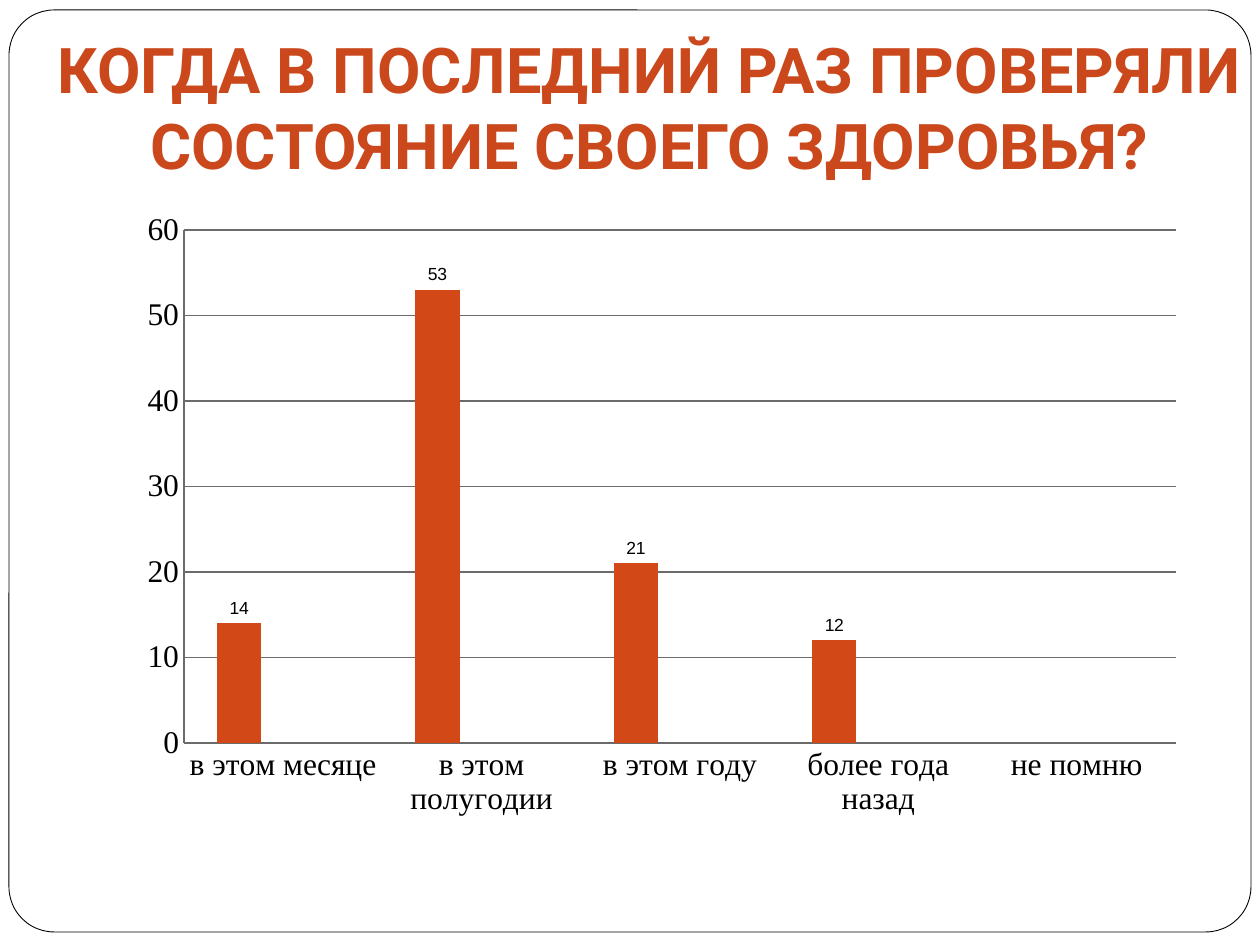
"""Build a slide with a survey question and a column chart of the answers."""
from dataclasses import dataclass

from lxml import etree
from pptx import Presentation
from pptx.chart.data import CategoryChartData
from pptx.dml.color import RGBColor
from pptx.enum.chart import XL_CHART_TYPE as Chart, XL_LABEL_POSITION as LabelPos
from pptx.enum.chart import XL_TICK_MARK as Tick
from pptx.enum.shapes import MSO_SHAPE as Shape
from pptx.enum.text import MSO_ANCHOR as Anchor, PP_ALIGN as Align
from pptx.oxml.ns import qn
from pptx.util import Emu, Pt

PX = 914400 / 126
COLORS = {
    "paper": "FFFFFF", "ink": "000000", "title": "CA481C", "grid": "6B6B6B",
    "orange": "D34817", "red": "9B2D1F", "sand": "A28E6A",
}
TITLE = "КОГДА В ПОСЛЕДНИЙ РАЗ ПРОВЕРЯЛИ СОСТОЯНИЕ СВОЕГО ЗДОРОВЬЯ?"
ANSWERS = ("в этом месяце", "в этом полугодии", "в этом году",
           "более года назад", "не помню")


@dataclass(frozen=True)
class Box:
    x: int
    y: int
    w: int
    h: int

    def emu(self) -> tuple:
        return tuple(px(v) for v in (self.x, self.y, self.w, self.h))


@dataclass(frozen=True)
class Series:
    name: str
    color: str
    values: tuple


SERIES = (
    Series("Series 1", "orange", (14, 53, 21, 12, None)),
    Series("Series 2", "red", (None,) * 5),
    Series("Series 3", "sand", (None,) * 5),
)


def px(n: int) -> Emu:
    return Emu(round(n * PX))


def rgb(name: str) -> RGBColor:
    return RGBColor.from_string(COLORS[name])


def style_font(font, name: str, size: int, color: str, bold: bool = False) -> None:
    font.name, font.size, font.bold = name, Pt(size), bold
    font.color.rgb = rgb(color)


def style_line(line, color: str, width: float) -> None:
    line.color.rgb = rgb(color)
    line.width = Pt(width)


def add_frame(s, box: Box) -> None:
    sp = s.shapes.add_shape(Shape.ROUNDED_RECTANGLE, *box.emu())
    sp.adjustments[0] = 0.049
    sp.shadow.inherit = False
    sp.fill.solid()
    sp.fill.fore_color.rgb = rgb("paper")
    style_line(sp.line, "ink", 0.5)


def add_title(s, box: Box, text: str) -> None:
    tf = s.shapes.add_textbox(*box.emu()).text_frame
    tf.word_wrap = True
    tf.vertical_anchor = Anchor.BOTTOM
    tf.margin_left = tf.margin_right = tf.margin_bottom = px(13)
    tf.margin_top = px(6)
    p = tf.paragraphs[0]
    p.alignment = Align.CENTER
    r = p.add_run()
    r.text = text
    style_font(r.font, "Roboto", 36, "title", bold=True)


def place_plot(chart, box: Box, plot: Box) -> None:
    area = chart._chartSpace.chart.plotArea
    for old in area.findall(qn("c:layout")):
        area.remove(old)
    layout = etree.Element(qn("c:layout"))
    manual = etree.SubElement(layout, qn("c:manualLayout"))
    settings = {
        "layoutTarget": "inner", "xMode": "edge", "yMode": "edge",
        "x": (plot.x - box.x) / box.w, "y": (plot.y - box.y) / box.h,
        "w": plot.w / box.w, "h": plot.h / box.h,
    }
    for tag, value in settings.items():
        etree.SubElement(manual, qn(f"c:{tag}")).set("val", str(value))
    area.insert(0, layout)


def add_answers(s, box: Box, plot: Box) -> None:
    data = CategoryChartData()
    data.categories = ANSWERS
    for row in SERIES:
        data.add_series(row.name, row.values)
    chart = s.shapes.add_chart(Chart.COLUMN_CLUSTERED, *box.emu(), data).chart
    chart.has_legend = chart.has_title = False
    style_font(chart.font, "Times New Roman", 18, "ink")
    place_plot(chart, box, plot)

    for axis in (chart.category_axis, chart.value_axis):
        axis.major_tick_mark = axis.minor_tick_mark = Tick.NONE
        style_line(axis.format.line, "grid", 0.75)
    values = chart.value_axis
    values.minimum_scale, values.maximum_scale, values.major_unit = 0, 60, 10
    values.has_major_gridlines = True
    style_line(values.major_gridlines.format.line, "grid", 0.75)

    bars = chart.plots[0]
    bars.gap_width, bars.overlap, bars.vary_by_categories = 150, 0, False
    for row, series in zip(SERIES, bars.series):
        series.format.fill.solid()
        series.format.fill.fore_color.rgb = rgb(row.color)
    labels = bars.series[0].data_labels
    labels.show_value = True
    labels.position = LabelPos.OUTSIDE_END
    style_font(labels.font, "Arial", 10, "ink")


def main() -> None:
    prs = Presentation()
    prs.slide_width, prs.slide_height = px(1260), px(945)
    s = prs.slides.add_slide(prs.slide_layouts[6])
    add_frame(s, Box(9, 10, 1242, 922))
    add_title(s, Box(39, 78, 1221, 117), TITLE)
    add_answers(s, Box(126, 199, 1071, 630), Box(184, 230, 992, 513))
    prs.save("out.pptx")


if __name__ == "__main__":
    main()
